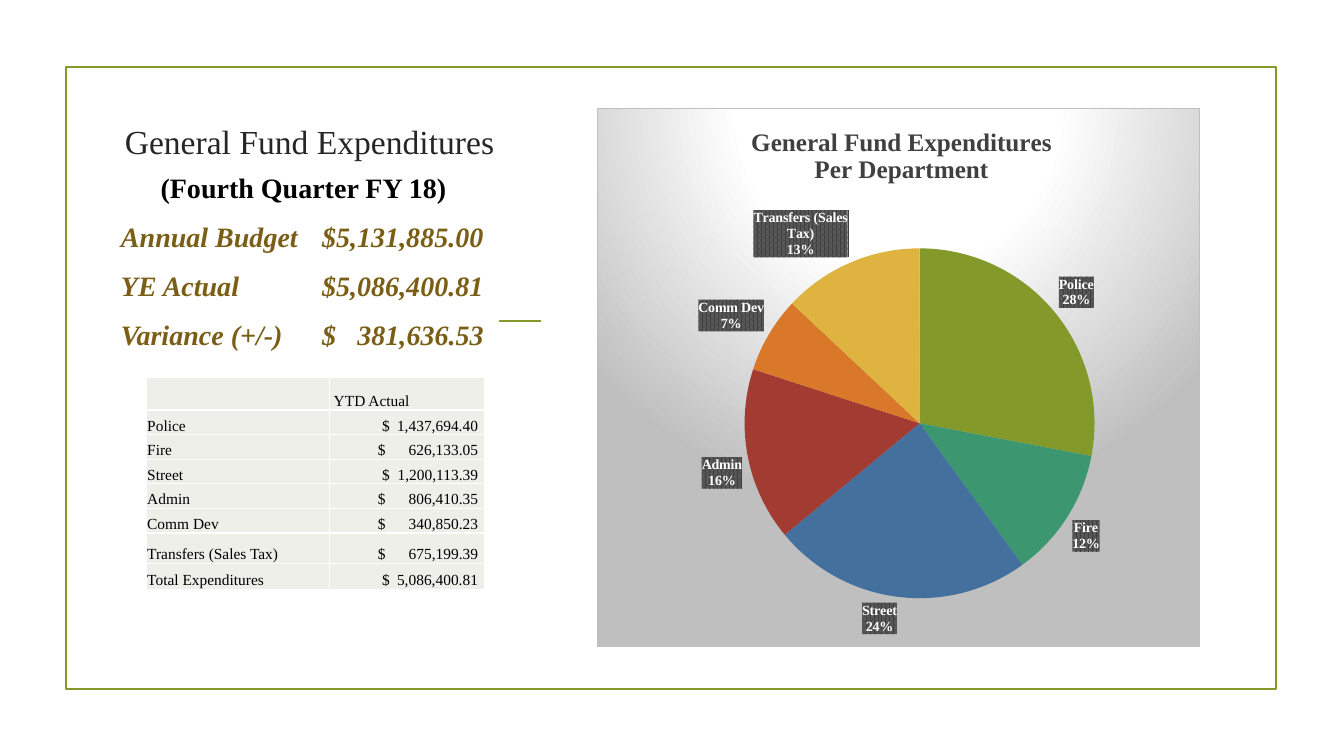
"""Build the General Fund Expenditures slide with its summary, table and pie chart."""
from dataclasses import dataclass

from lxml import etree
from pptx import Presentation
from pptx.chart.data import CategoryChartData
from pptx.dml.color import RGBColor
from pptx.enum.chart import XL_CHART_TYPE, XL_LABEL_POSITION
from pptx.enum.shapes import MSO_CONNECTOR, MSO_SHAPE
from pptx.enum.text import MSO_ANCHOR, PP_ALIGN
from pptx.oxml import parse_xml
from pptx.oxml.ns import nsdecls, qn
from pptx.util import Cm, Pt

PIE = XL_CHART_TYPE.PIE
OUTSIDE_END = XL_LABEL_POSITION.OUTSIDE_END
STRAIGHT = MSO_CONNECTOR.STRAIGHT
RECTANGLE = MSO_SHAPE.RECTANGLE
BOTTOM = MSO_ANCHOR.BOTTOM
CENTER = PP_ALIGN.CENTER


@dataclass(frozen=True)
class Theme:
    font: str = "Times New Roman"
    white: str = "FFFFFF"
    black: str = "000000"
    heading: str = "262626"
    gold: str = "7A5E15"
    green: str = "83992A"
    cell: str = "EDEFE8"
    grey: str = "BFBFBF"
    dark: str = "404040"
    dark_dots: str = "595959"
    slices: tuple = ("83992A", "3C9770", "44709D", "A23C33", "D97828", "DEB340")
    heading_size: int = 24
    summary_size: int = 20
    chart_title_size: int = 18
    table_size: int = 11
    label_size: int = 10


theme = Theme()


def add_run(paragraph, text, size, color, bold=False, italic=False):
    run = paragraph.add_run()
    run.text = text
    run.font.name = theme.font
    run.font.size = Pt(size)
    run.font.color.rgb = RGBColor.from_string(color)
    run.font.bold = bold
    run.font.italic = italic


def add_tabs(paragraph, left, right):
    tabs = etree.SubElement(paragraph._p.get_or_add_pPr(), qn("a:tabLst"))
    for position, align in ((left, "l"), (right, "r")):
        etree.SubElement(tabs, qn("a:tab"), pos=str(Cm(position)), algn=align)


presentation = Presentation()
presentation.slide_width, presentation.slide_height = Cm(33.87), Cm(19.05)
slide = presentation.slides.add_slide(presentation.slide_layouts[6])
shapes = slide.shapes

frame = shapes.add_shape(RECTANGLE, Cm(1.67), Cm(1.69), Cm(30.49), Cm(15.68))
frame.shadow.inherit = False
frame.fill.background()
divider = shapes.add_connector(STRAIGHT, Cm(3.89), Cm(8.09), Cm(13.64), Cm(8.09))
for outlined in (frame, divider):
    outlined.line.color.rgb = RGBColor.from_string(theme.green)
    outlined.line.width = Pt(1.25)
etree.SubElement(divider._element.spPr, qn("a:effectLst"))

heading = shapes.add_textbox(Cm(2.34), Cm(1.27), Cm(10.92), Cm(2.92)).text_frame
heading.word_wrap = True
heading.vertical_anchor = BOTTOM
heading.paragraphs[0].alignment = CENTER
add_run(heading.paragraphs[0], "General Fund Expenditures", theme.heading_size, theme.heading)

summary_box = shapes.add_textbox(Cm(2.72), Cm(4.17), Cm(9.86), Cm(5.03))
summary_box.fill.solid()
summary_box.fill.fore_color.rgb = RGBColor.from_string(theme.white)
summary = summary_box.text_frame
summary.word_wrap = True
summary.margin_left = summary.margin_right = Cm(0.33)
period = summary.paragraphs[0]
period.alignment = CENTER
period.space_after = Pt(6)
add_run(period, "(Fourth Quarter FY 18)", theme.summary_size, theme.black, bold=True)
for budget_line in (
    "Annual Budget\t$5,131,885.00",
    "YE Actual\t$5,086,400.81",
    "Variance (+/-)\t$\t381,636.53",
):
    paragraph = summary.add_paragraph()
    paragraph.space_before, paragraph.space_after = Pt(5), Pt(6)
    add_tabs(paragraph, 5.07, 9.14)
    add_run(paragraph, budget_line, theme.summary_size, theme.gold, bold=True, italic=True)

departments = {
    "Police": 28,
    "Fire": 12,
    "Street": 24,
    "Admin": 16,
    "Comm Dev": 7,
    "Transfers (Sales Tax)": 13,
}
chart_data = CategoryChartData()
chart_data.categories = list(departments)
chart_data.add_series("Series 1", list(departments.values()))
chart = shapes.add_chart(PIE, Cm(15.05), Cm(2.72), Cm(15.19), Cm(13.59), chart_data).chart
chart.has_legend = False
chart.font.name = theme.font
chart.font.size = Pt(theme.label_size)
chart.font.color.rgb = RGBColor.from_string(theme.black)
chart_title = chart.chart_title.text_frame
for index, title_line in enumerate(("General Fund Expenditures", "Per Department")):
    paragraph = chart_title.add_paragraph() if index else chart_title.paragraphs[0]
    add_run(paragraph, title_line, theme.chart_title_size, theme.dark, bold=True)

pie = chart.plots[0]
pie.vary_by_categories = True
spending = pie.series[0]
for index, color in enumerate(theme.slices):
    slice_fill = spending.points[index].format.fill
    slice_fill.solid()
    slice_fill.fore_color.rgb = RGBColor.from_string(color)

labels = spending.data_labels
labels.show_value = False
labels.show_category_name = labels.show_percentage = True
labels.number_format, labels.number_format_is_linked = "0%", False
labels.position = OUTSIDE_END
labels.font.name = theme.font
labels.font.size = Pt(theme.label_size)
labels.font.bold = True
labels.font.color.rgb = RGBColor.from_string(theme.white)

chart_space = chart.element
label_node = chart_space.xpath(".//c:ser/c:dLbls")[0]
label_node.find(qn("c:txPr")).addprevious(parse_xml(
    f'<c:spPr {nsdecls("c", "a")}><a:pattFill prst="pct75">'
    f'<a:fgClr><a:srgbClr val="{theme.dark}"/></a:fgClr>'
    f'<a:bgClr><a:srgbClr val="{theme.dark_dots}"/></a:bgClr>'
    '</a:pattFill></c:spPr>'))
label_node.find(qn("c:showBubbleSize")).addnext(
    parse_xml(f'<c:separator {nsdecls("c")}>\n</c:separator>'))

stops = "".join(
    f'<a:gs pos="{position}000"><a:srgbClr val="{color}"/></a:gs>'
    for position, color in ((0, theme.white), (39, theme.white), (100, theme.grey)))
chart_space.find(qn("c:chart")).addnext(parse_xml(
    f'<c:spPr {nsdecls("c", "a")}><a:gradFill><a:gsLst>{stops}</a:gsLst>'
    '<a:path path="circle"><a:fillToRect l="50000" t="-80000" r="50000" b="180000"/></a:path>'
    f'</a:gradFill><a:ln w="{Pt(0.75)}"><a:solidFill><a:srgbClr val="{theme.grey}"/>'
    '</a:solidFill></a:ln></c:spPr>'))

for part, order, settings in (
    ("title", 1, {"xMode": "edge", "yMode": "edge", "x": 0.25, "y": 0.03}),
    ("plotArea", 0, {"layoutTarget": "inner", "xMode": "edge", "yMode": "edge",
                     "x": 0.24, "y": 0.26, "w": 0.59, "h": 0.65}),
):
    area = chart_space.xpath(f"c:chart/c:{part}")[0]
    for automatic in area.findall(qn("c:layout")):
        area.remove(automatic)
    layout = parse_xml(f'<c:layout {nsdecls("c")}><c:manualLayout/></c:layout>')
    for key, value in settings.items():
        etree.SubElement(layout[0], qn(f"c:{key}"), val=str(value))
    area.insert(order, layout)

expenditures = (
    ("", "YTD Actual", 0.81),
    ("Police", "1,437,694.40", 0.62),
    ("Fire", "626,133.05", 0.62),
    ("Street", "1,200,113.39", 0.62),
    ("Admin", "806,410.35", 0.62),
    ("Comm Dev", "340,850.23", 0.62),
    ("Transfers (Sales Tax)", "675,199.39", 0.76),
    ("Total Expenditures", "5,086,400.81", 0.66),
)
table = shapes.add_table(
    len(expenditures), 2, Cm(3.69), Cm(9.52), Cm(8.51), Cm(5.33)).table
table.first_row = table.horz_banding = False
table.columns[0].width, table.columns[1].width = Cm(4.62), Cm(3.89)
for row, (department, amount, height) in enumerate(expenditures):
    table.rows[row].height = Cm(height)
    for column, text in enumerate((department, amount)):
        cell = table.cell(row, column)
        cell.vertical_anchor = BOTTOM
        cell.margin_left = Cm(0.1 if column and not row else 0.02)
        cell.margin_right = cell.margin_top = Cm(0.02)
        cell.margin_bottom = 0
        cell.fill.solid()
        cell.fill.fore_color.rgb = RGBColor.from_string(theme.cell)
        for order, side in enumerate("LRTB"):
            cell._tc.tcPr.insert(order, parse_xml(
                f'<a:ln{side} {nsdecls("a")} w="{Pt(1)}"><a:solidFill>'
                f'<a:srgbClr val="{theme.white}"/></a:solidFill></a:ln{side}>'))
        paragraph = cell.text_frame.paragraphs[0]
        if row and column:
            add_tabs(paragraph, 1.3 if len(amount) > 10 else 1.19, 3.72)
            text = f"\t$\t{text}"
        if text:
            add_run(paragraph, text, theme.table_size, theme.black)

presentation.save("out.pptx")
